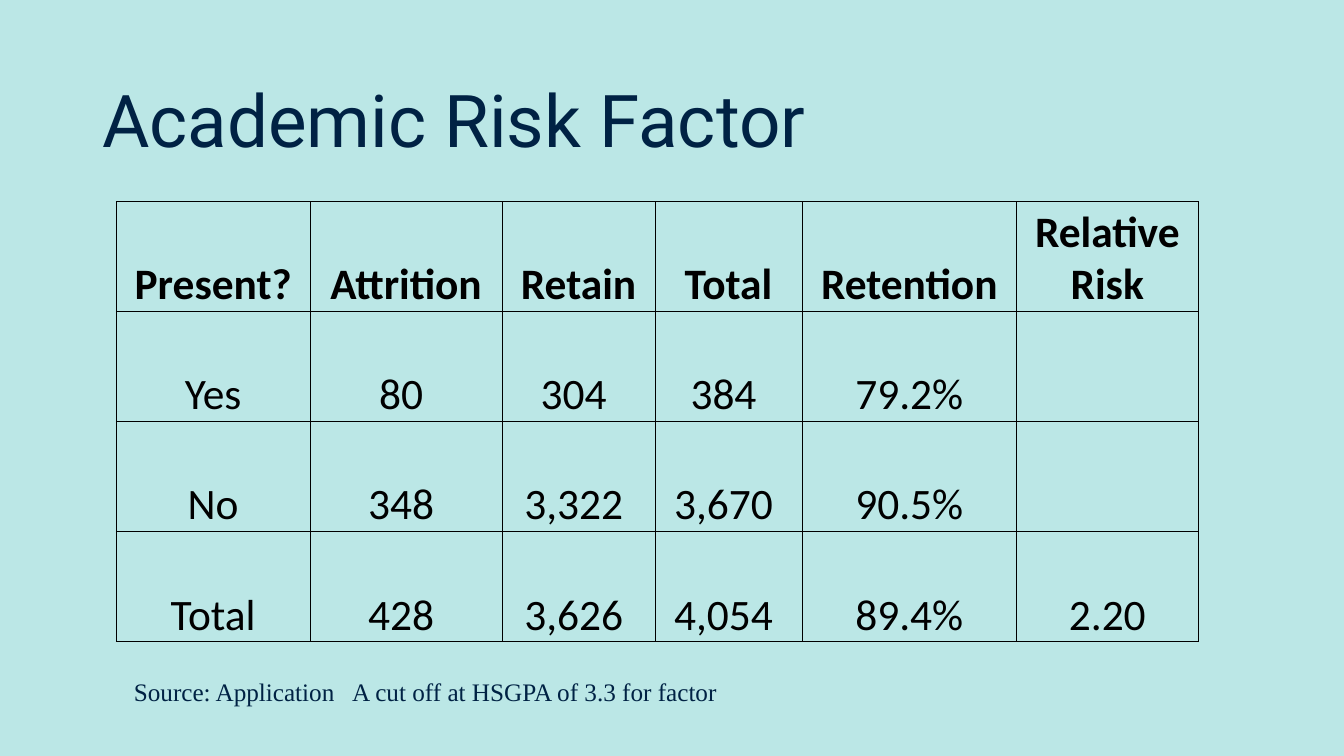
from lxml import etree
from pptx import Presentation
from pptx.dml.color import RGBColor
from pptx.enum.text import MSO_ANCHOR, MSO_AUTO_SIZE, PP_ALIGN
from pptx.oxml.ns import qn
from pptx.util import Pt

LEFT, CENTER = PP_ALIGN.LEFT, PP_ALIGN.CENTER
MIDDLE, BOTTOM = MSO_ANCHOR.MIDDLE, MSO_ANCHOR.BOTTOM
NO_FIT, GROW = MSO_AUTO_SIZE.NONE, MSO_AUTO_SIZE.SHAPE_TO_FIT_TEXT
TITLE_ONLY = 5
NAVY, BLACK, AQUA = "002244", "000000", "BBE7E6"

COLUMN_WIDTHS = [138.5, 137.2, 109.2, 104.9, 153.5, 129.4]
ROW_HEIGHT = 78.6
FIGURE_COLUMNS = range(1, 4)
RISK_ROWS = [
    ["Present?", "Attrition", "Retain", "Total", "Retention", "Relative Risk"],
    ["Yes", "80", "304", "384", "79.2%", ""],
    ["No", "348", "3,322", "3,670", "90.5%", ""],
    ["Total", "428", "3,626", "4,054", "89.4%", "2.20"],
]


def color(hex_text):
    """Return the colour for a hex string."""
    return RGBColor.from_string(hex_text)


def add_span(para, text, font_name, size, hex_text, bold=False):
    """Add one formatted run to a paragraph."""
    span = para.add_run()
    span.text = text
    span.font.name = font_name
    span.font.size = Pt(size)
    span.font.bold = bold
    span.font.color.rgb = color(hex_text)


def add_borders(cell):
    """Draw thin black lines on all four sides of a cell."""
    properties = cell._tc.get_or_add_tcPr()
    for position, side in enumerate(("a:lnL", "a:lnR", "a:lnT", "a:lnB")):
        line = etree.Element(qn(side), w=str(Pt(0.5)))
        fill = etree.SubElement(line, qn("a:solidFill"))
        etree.SubElement(fill, qn("a:srgbClr"), val=BLACK)
        properties.insert(position, line)


def add_title(page, left, top, width, height):
    """Place and fill the title placeholder."""
    title = page.shapes.title
    title.left, title.top = Pt(left), Pt(top)
    title.width, title.height = Pt(width), Pt(height)
    frame = title.text_frame
    frame.auto_size = NO_FIT
    frame.vertical_anchor = MIDDLE
    para = frame.paragraphs[0]
    para.alignment = LEFT
    para.line_spacing = 0.9
    add_span(para, "Academic Risk Factor", "Roboto", 52, NAVY)


def fill_cell(cell, text, is_header, is_figure):
    """Format one table cell and write its text."""
    cell.fill.background()
    add_borders(cell)
    cell.vertical_anchor = BOTTOM
    cell.margin_left = cell.margin_top = Pt(2)
    cell.margin_right = Pt(9 if is_figure else 2)
    cell.margin_bottom = Pt(0)
    para = cell.text_frame.paragraphs[0]
    para.alignment = CENTER
    if text:
        add_span(para, text, "Calibri", 31, BLACK, is_header)


def add_risk_table(page, left, top):
    """Build the table of retention by risk factor."""
    frame = page.shapes.add_table(
        len(RISK_ROWS), len(COLUMN_WIDTHS), Pt(left), Pt(top),
        Pt(sum(COLUMN_WIDTHS)), Pt(ROW_HEIGHT * len(RISK_ROWS)))
    table = frame.table
    table.first_row = table.horz_banding = False
    for column, width in zip(table.columns, COLUMN_WIDTHS):
        column.width = Pt(width)
    for row_index, values in enumerate(RISK_ROWS):
        table.rows[row_index].height = Pt(ROW_HEIGHT)
        is_header = row_index == 0
        for column_index, text in enumerate(values):
            is_figure = not is_header and column_index in FIGURE_COLUMNS
            fill_cell(table.cell(row_index, column_index), text, is_header, is_figure)


def add_source_note(page, left, top, width, height):
    """Write the source and the cut-off, set apart by a tab stop."""
    box = page.shapes.add_textbox(Pt(left), Pt(top), Pt(width), Pt(height))
    frame = box.text_frame
    frame.word_wrap = True
    frame.auto_size = GROW
    para = frame.paragraphs[0]
    tabs = etree.SubElement(para._p.get_or_add_pPr(), qn("a:tabLst"))
    etree.SubElement(tabs, qn("a:tab"), pos=str(Pt(156)), algn="l")
    for text in ("Source: Application", "\tA cut off at HSGPA of 3.3 for factor"):
        add_span(para, text, "Times New Roman", 18, NAVY)


def main():
    """Build and save the deck."""
    deck = Presentation()
    deck.slide_width, deck.slide_height = Pt(960), Pt(540)
    page = deck.slides.add_slide(deck.slide_layouts[TITLE_ONLY])
    page.background.fill.solid()
    page.background.fill.fore_color.rgb = color(AQUA)
    add_title(page, 66, 44, 828, 89)
    add_risk_table(page, 83, 144)
    add_source_note(page, 88.5, 479.5, 445, 51)
    deck.save("out.pptx")


if __name__ == "__main__":
    main()
